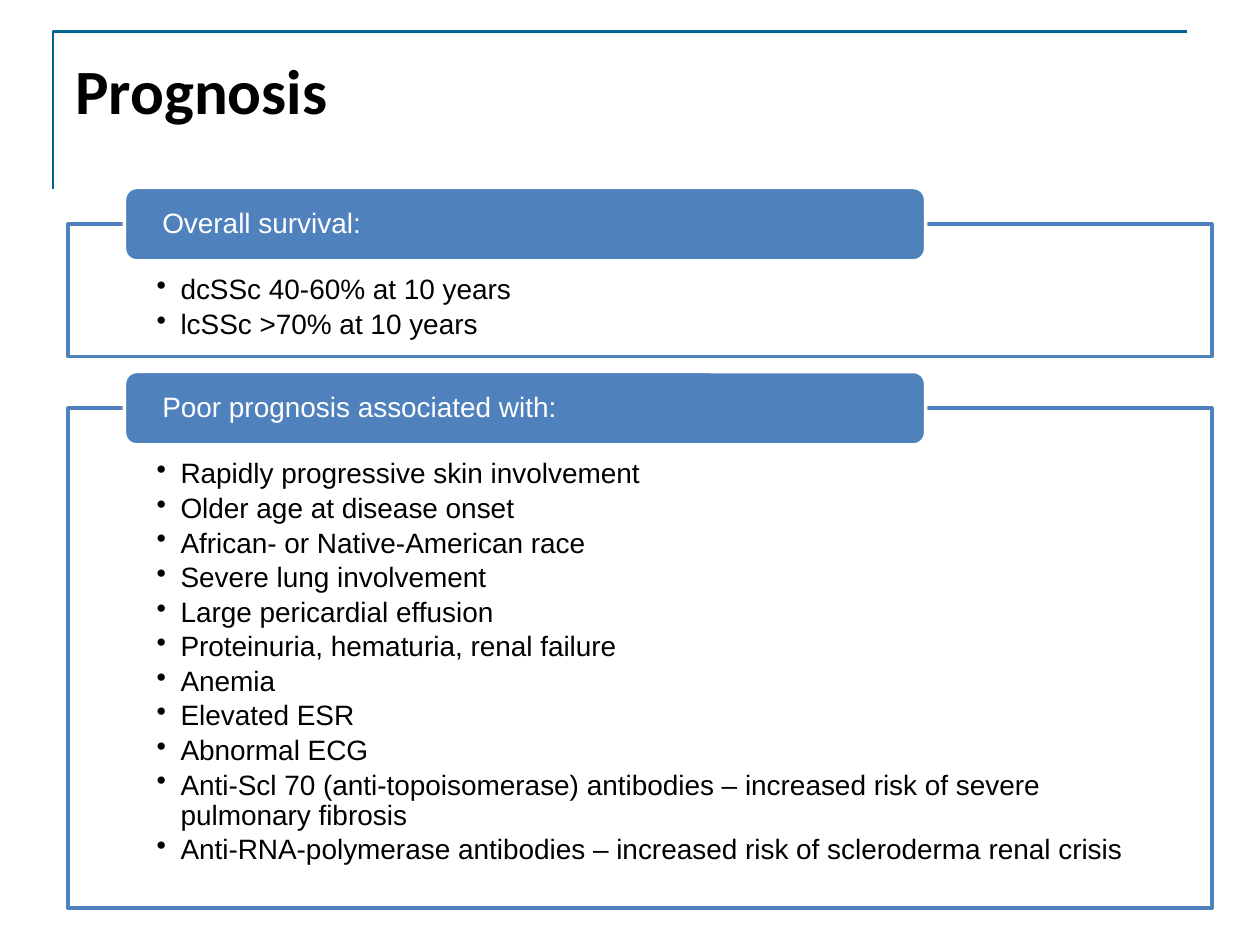
from dataclasses import dataclass

from lxml.etree import SubElement
from pptx import Presentation
from pptx.dml.color import RGBColor
from pptx.enum.shapes import MSO_SHAPE
from pptx.enum.text import MSO_ANCHOR, PP_ALIGN
from pptx.oxml.ns import qn
from pptx.shapes.autoshape import Shape
from pptx.slide import Slide
from pptx.text.text import TextFrame, _Paragraph
from pptx.util import Cm, Pt


@dataclass(frozen=True)
class Theme:
    accent: RGBColor = RGBColor(0x4F, 0x81, 0xBD)
    bracket: RGBColor = RGBColor(0x00, 0x64, 0x91)
    light: RGBColor = RGBColor(0xFF, 0xFF, 0xFF)
    dark: RGBColor = RGBColor(0x00, 0x00, 0x00)
    title_font: str = "Calibri"
    body_font: str = "Arial"
    title_size: Pt = Pt(36)
    body_size: Pt = Pt(16)
    border: Pt = Pt(2)
    bracket_line: Pt = Pt(1.5)
    panel_opacity: int = 90


@dataclass(frozen=True)
class Section:
    heading: str
    points: tuple[str, ...]
    height: float


THEME = Theme()
PANEL_LEFT, PANEL_WIDTH = 1.37, 23.06
FIRST_TOP, PANEL_GAP = 4.52, 1.04
BAR_LEFT, BAR_WIDTH, BAR_HEIGHT = 2.51, 16.15, 1.48
BULLET_INDENT = Cm(0.48)

SECTIONS = (
    Section(
        "Overall survival:",
        ("dcSSc 40-60% at 10 years", "lcSSc >70% at 10 years"),
        2.67,
    ),
    Section(
        "Poor prognosis associated with:",
        (
            "Rapidly progressive skin involvement",
            "Older age at disease onset",
            "African- or Native-American race",
            "Severe lung involvement",
            "Large pericardial effusion",
            "Proteinuria, hematuria, renal failure",
            "Anemia",
            "Elevated ESR",
            "Abnormal ECG",
            "Anti-Scl 70 (anti-topoisomerase) antibodies – increased risk of severe pulmonary fibrosis",
            "Anti-RNA-polymerase antibodies – increased risk of scleroderma renal crisis",
        ),
        10.08,
    ),
)


def set_margins(frame: TextFrame, left: float, top: float, right: float, bottom: float) -> None:
    frame.word_wrap = True
    frame.margin_left, frame.margin_top = Cm(left), Cm(top)
    frame.margin_right, frame.margin_bottom = Cm(right), Cm(bottom)


def add_span(paragraph: _Paragraph, text: str, font: str, size: Pt, color: RGBColor, bold: bool = False) -> None:
    paragraph.alignment = PP_ALIGN.LEFT
    span = paragraph.add_run()
    span.text = text
    span.font.name, span.font.size, span.font.bold = font, size, bold
    span.font.color.rgb = color


def add_bullet(paragraph: _Paragraph) -> None:
    properties = paragraph._p.get_or_add_pPr()
    properties.set("marL", str(BULLET_INDENT))
    properties.set("indent", str(-BULLET_INDENT))
    SubElement(properties, qn("a:buChar")).set("char", "•")


def add_block(page: Slide, kind: MSO_SHAPE, left: float, top: float, width: float, height: float,
              fill: RGBColor, line: RGBColor) -> Shape:
    block = page.shapes.add_shape(kind, Cm(left), Cm(top), Cm(width), Cm(height))
    block.shadow.inherit = False
    block.fill.solid()
    block.fill.fore_color.rgb = fill
    block.line.color.rgb = line
    block.line.width = THEME.border
    return block


def add_panel(page: Slide, section: Section, top: float) -> None:
    panel = add_block(page, MSO_SHAPE.RECTANGLE, PANEL_LEFT, top, PANEL_WIDTH, section.height,
                      THEME.light, THEME.accent)
    fill_color = panel._element.spPr.find(qn("a:solidFill")).find(qn("a:srgbClr"))
    SubElement(fill_color, qn("a:alpha")).set("val", str(THEME.panel_opacity * 1000))
    frame = panel.text_frame
    frame.vertical_anchor = MSO_ANCHOR.TOP
    set_margins(frame, 1.79, 1.04, 1.79, 0.3)
    for index, point in enumerate(section.points):
        paragraph = frame.add_paragraph() if index else frame.paragraphs[0]
        add_bullet(paragraph)
        paragraph.line_spacing = 0.9
        paragraph.space_after = Pt(2.5)
        add_span(paragraph, point, THEME.body_font, THEME.body_size, THEME.dark)


def add_heading_bar(page: Slide, heading: str, panel_top: float) -> None:
    bar = add_block(page, MSO_SHAPE.ROUNDED_RECTANGLE, BAR_LEFT, panel_top - BAR_HEIGHT / 2,
                    BAR_WIDTH, BAR_HEIGHT, THEME.accent, THEME.light)
    frame = bar.text_frame
    frame.vertical_anchor = MSO_ANCHOR.MIDDLE
    set_margins(frame, 0.69, 0, 0.69, 0)
    paragraph = frame.paragraphs[0]
    paragraph.line_spacing = 0.9
    add_span(paragraph, heading, THEME.body_font, THEME.body_size, THEME.light)


def add_corner_bracket(page: Slide) -> None:
    left, top, right, bottom = Cm(1.07), Cm(0.64), Cm(23.93), Cm(3.81)
    builder = page.shapes.build_freeform(left, bottom)
    builder.add_line_segments([(left, top), (right, top)], close=False)
    bracket = builder.convert_to_shape()
    bracket.shadow.inherit = False
    bracket.fill.background()
    bracket.line.color.rgb = THEME.bracket
    bracket.line.width = THEME.bracket_line


def add_title(page: Slide, text: str) -> None:
    box = page.shapes.add_textbox(Cm(1.27), Cm(0.76), Cm(22.86), Cm(2.08))
    frame = box.text_frame
    frame.vertical_anchor = MSO_ANCHOR.MIDDLE
    set_margins(frame, 0.25, 0.13, 0.25, 0.13)
    add_span(frame.paragraphs[0], text, THEME.title_font, THEME.title_size, THEME.dark, bold=True)


def main() -> None:
    deck = Presentation()
    deck.slide_width, deck.slide_height = Cm(25.4), Cm(19.05)
    page = deck.slides.add_slide(deck.slide_layouts[6])
    add_corner_bracket(page)
    add_title(page, "Prognosis")
    top = FIRST_TOP
    for section in SECTIONS:
        add_panel(page, section, top)
        add_heading_bar(page, section.heading, top)
        top += section.height + PANEL_GAP
    deck.save("out.pptx")


if __name__ == "__main__":
    main()
